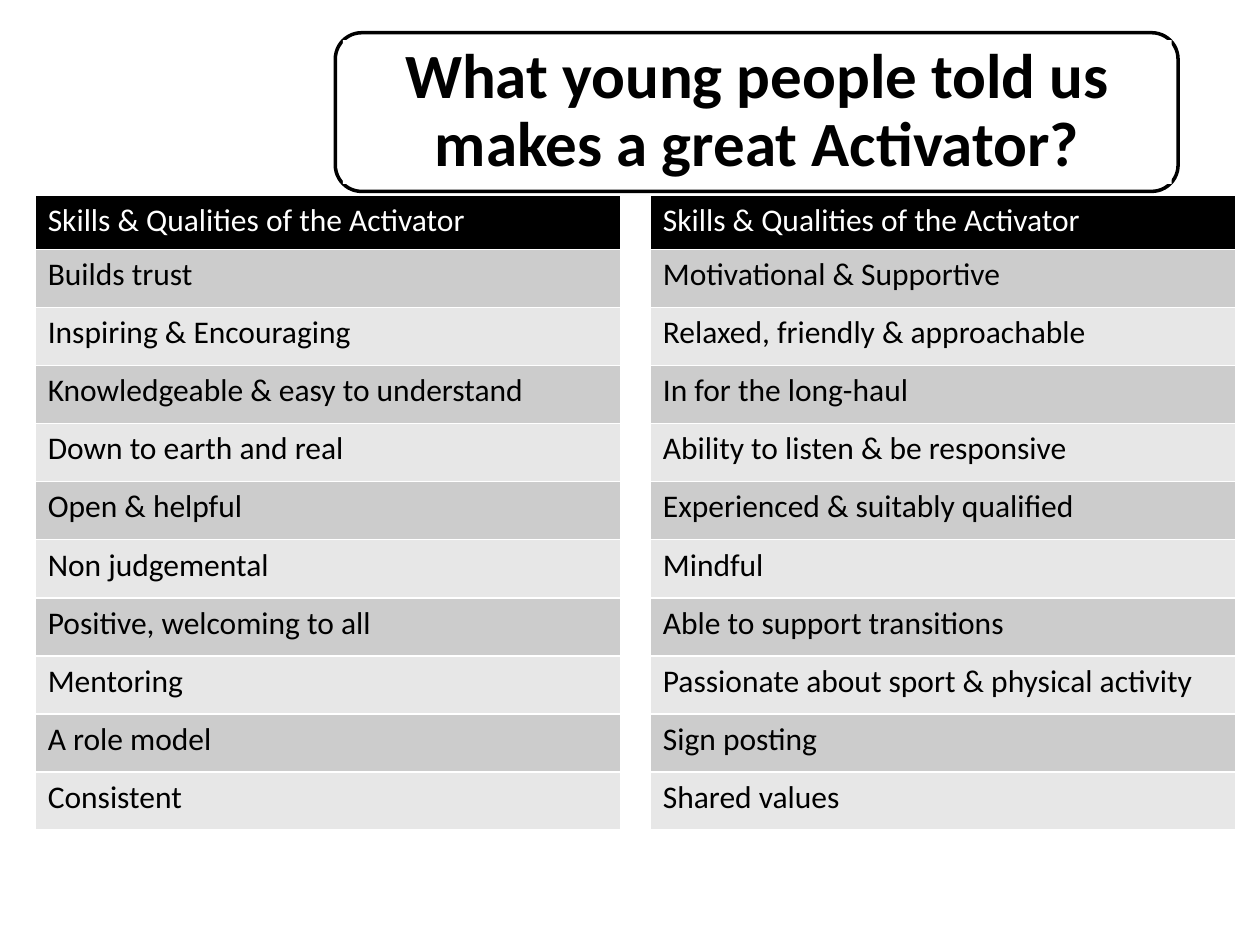
from dataclasses import dataclass

from pptx import Presentation
from pptx.dml.color import RGBColor as Rgb
from pptx.enum.shapes import MSO_SHAPE as Shape
from pptx.enum.text import MSO_ANCHOR as Anchor, MSO_AUTO_SIZE as Fit, PP_ALIGN as Align
from pptx.util import Cm, Pt


@dataclass(frozen=True)
class Theme:
    font: str = "Calibri"
    black: Rgb = Rgb(0, 0, 0)
    white: Rgb = Rgb(255, 255, 255)
    bands: tuple = (Rgb(0xCC, 0xCC, 0xCC), Rgb(0xE7, 0xE7, 0xE7))
    head: Pt = Pt(36)
    body: Pt = Pt(18)


THEME = Theme()
TITLE = "What young people told us makes a great Activator?"
HEADER = "Skills & Qualities of the Activator"
LEFT = [
    "Builds trust",
    "Inspiring & Encouraging",
    "Knowledgeable & easy to understand",
    "Down to earth and real",
    "Open & helpful",
    "Non judgemental",
    "Positive, welcoming to all",
    "Mentoring",
    "A role model",
    "Consistent",
]
RIGHT = [
    "Motivational & Supportive",
    "Relaxed, friendly & approachable",
    "In for the long-haul",
    "Ability to listen & be responsive",
    "Experienced & suitably qualified",
    "Mindful",
    "Able to support transitions",
    "Passionate about sport & physical activity",
    "Sign posting",
    "Shared values",
]


def paint(shape, color):
    shape.fill.solid()
    shape.fill.fore_color.rgb = color


def style(para, size, color, bold=False):
    font = para.font
    font.name, font.size, font.bold = THEME.font, size, bold
    font.color.rgb = color


def add_title(slide, text):
    # Rounded frame, with the title placeholder in front of it
    frame = slide.shapes.add_shape(
        Shape.ROUNDED_RECTANGLE, Cm(6.76), Cm(0.66), Cm(16.99), Cm(3.2))
    frame.shadow.inherit = False
    paint(frame, THEME.white)
    frame.line.color.rgb = THEME.black
    frame.line.width = Pt(2)

    title = slide.shapes.title
    frame.element.addnext(title.element)
    title.left, title.top = Cm(6.91), Cm(0.81)
    title.width, title.height = Cm(16.71), Cm(2.9)
    paint(title, THEME.white)

    box = title.text_frame
    box.text = text
    box.word_wrap, box.auto_size = True, Fit.NONE
    box.vertical_anchor = Anchor.MIDDLE
    box.margin_left = box.margin_right = Cm(0.38)
    box.margin_top = box.margin_bottom = Cm(0.38)
    para = box.paragraphs[0]
    para.alignment, para.line_spacing = Align.CENTER, 0.9
    style(para, THEME.head, THEME.black, bold=True)


def add_list(slide, left, items):
    # One column: black header, then grey bands in turn
    rows = [HEADER, *items]
    table = slide.shapes.add_table(
        len(rows), 1, left, Cm(3.94), Cm(11.81), Cm(12.79)).table
    for i, text in enumerate(rows):
        top = i == 0
        table.rows[i].height = Cm(1.09 if top else 1.17)
        cell = table.cell(i, 0)
        cell.text = text
        paint(cell, THEME.black if top else THEME.bands[(i - 1) % 2])
        style(cell.text_frame.paragraphs[0], THEME.body,
              THEME.white if top else THEME.black)


def main():
    deck = Presentation()
    deck.slide_width, deck.slide_height = Cm(25.4), Cm(19.05)
    slide = deck.slides.add_slide(deck.slide_layouts[5])
    for left, items in ((Cm(0.71), LEFT), (Cm(13.11), RIGHT)):
        add_list(slide, left, items)
    add_title(slide, TITLE)
    deck.save("out.pptx")


if __name__ == "__main__":
    main()
